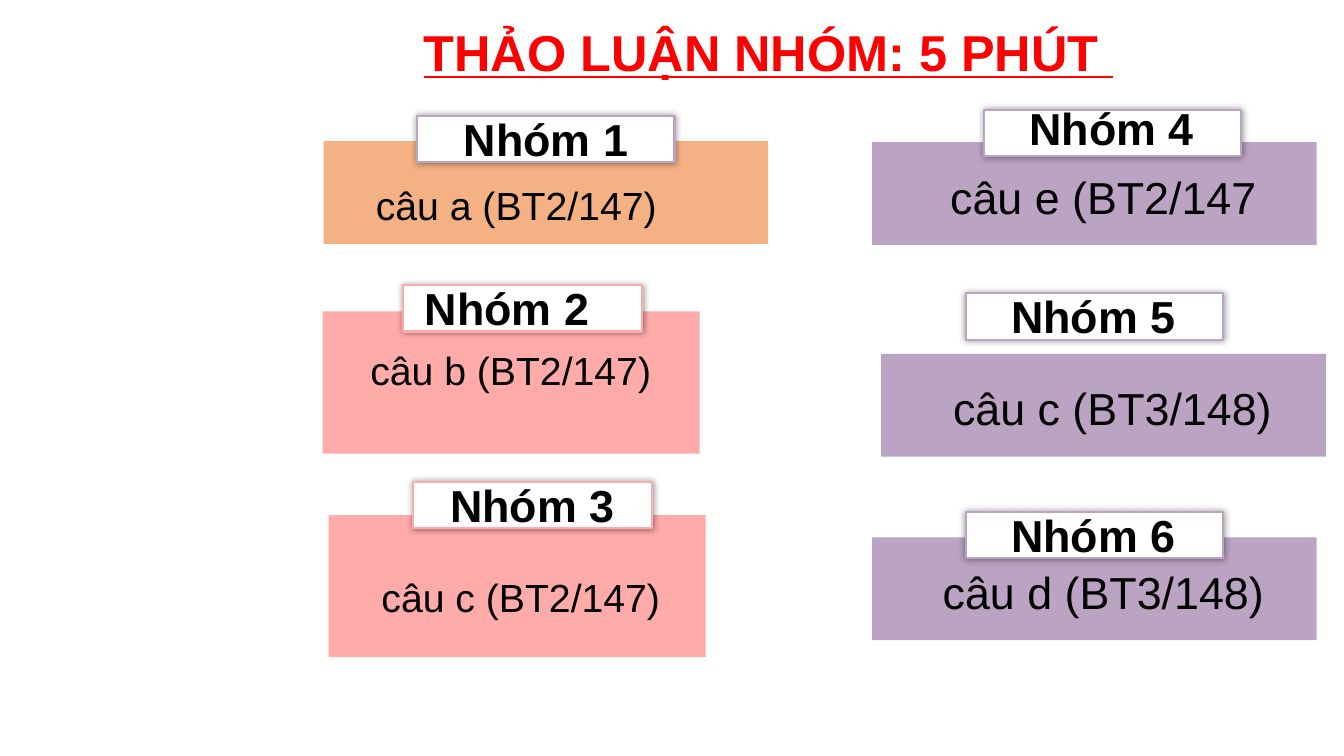
from typing import NamedTuple

from lxml import etree
from pptx import Presentation
from pptx.dml.color import RGBColor
from pptx.enum.shapes import MSO_SHAPE as Preset
from pptx.enum.text import MSO_AUTO_SIZE as AutoSize, PP_ALIGN as Align
from pptx.oxml.ns import qn
from pptx.util import Emu, Pt

PX = 9144  # EMU per px, 100 px to the inch
COLORS = {
    "title": "FF0000",
    "text": "000000",
    "paper": "FFFFFF",
    "orange": "F4B183",
    "pink": "FFABAA",
    "purple": "BBA4C3",
}
TITLE_FORMAT = {"size": Pt(36), "bold": True, "underline": True}
TAG_FORMAT = {"size": Pt(32), "bold": True}
TAG_HEIGHT = 46


class Box(NamedTuple):
    left: int
    top: int
    width: int
    height: int

    def inset(self, dx: int, dy: int, width: int, height: int) -> "Box":
        return Box(self.left + dx, self.top + dy, width, height)

    def emu(self) -> list[Emu]:
        return [Emu(value * PX) for value in self]


class Layout(NamedTuple):
    """Sizes shared by the groups of one column."""
    card: tuple[int, int]
    tag_width: int
    tag_text_width: int
    task_width: int
    task_height: int
    task_size: int


class Group(NamedTuple):
    name: str
    task: str
    layout: Layout
    fill: str
    border: str
    card_at: tuple[int, int]
    tag_at: tuple[int, int]
    task_shift: tuple[int, int] = (18, 22)
    name_shift: tuple[int, int] = (16, -9)


WIDE = Layout((441, 102), 255, 221, 423, 64, 32)
FIRST = Layout((441, 102), 255, 221, 364, 57, 28)
TALL = Layout((374, 141), 237, 206, 347, 57, 28)

GROUPS = [
    Group("Nhóm 1", "câu a (BT2/147)", FIRST, "orange", "purple",
          (321, 140), (414, 115), (9, 35), (17, -9)),
    Group("Nhóm 2", "câu b (BT2/147)", TALL, "pink", "pink",
          (320, 309), (400, 283), (13, 30), (0, -9)),
    Group("Nhóm 3", "câu c (BT2/147)", TALL, "pink", "pink",
          (326, 511), (410, 478), (17, 53), (15, -9)),
    Group("Nhóm 4", "câu e (BT2/147", WIDE, "purple", "purple",
          (865, 141), (976, 109), name_shift=(16, -14)),
    Group("Nhóm 5", "câu c (BT3/148)", WIDE, "purple", "purple",
          (874, 351), (958, 291)),
    Group("Nhóm 6", "câu d (BT3/148)", WIDE, "purple", "purple",
          (865, 533), (958, 508)),
]


def rgb(name: str) -> RGBColor:
    return RGBColor.from_string(COLORS[name])


def add_glow_shadow(shape) -> None:
    """Soft black shadow on all sides."""
    effects = shape._element.spPr.find(qn("a:effectLst"))
    shadow = etree.SubElement(effects, qn("a:outerShdw"),
                              blurRad=str(Pt(5)), dist="0", dir="0", algn="ctr")
    color = etree.SubElement(shadow, qn("a:srgbClr"), val=COLORS["text"])
    etree.SubElement(color, qn("a:alpha"), val="40000")


def add_panel(slide, box: Box, fill: str, border: str | None = None) -> None:
    panel = slide.shapes.add_shape(Preset.RECTANGLE, *box.emu())
    panel.shadow.inherit = False
    panel.fill.solid()
    panel.fill.fore_color.rgb = rgb(fill)
    if border is None:
        panel.line.fill.background()
        return
    panel.line.color.rgb = rgb(border)
    panel.line.width = Pt(1.5)
    add_glow_shadow(panel)


def add_label(slide, box: Box, words: str, formats: dict,
              color: str = "text", wrap: bool = True) -> None:
    frame = slide.shapes.add_textbox(*box.emu()).text_frame
    frame.word_wrap = wrap
    frame.auto_size = AutoSize.SHAPE_TO_FIT_TEXT
    paragraph = frame.paragraphs[0]
    paragraph.alignment = Align.CENTER
    run = paragraph.add_run()
    run.text = words
    for attribute, value in {"name": "Arial", **formats}.items():
        setattr(run.font, attribute, value)
    run.font.color.rgb = rgb(color)


def add_group(slide, group: Group) -> None:
    layout = group.layout
    # Coloured card with its task
    card = Box(*group.card_at, *layout.card)
    add_panel(slide, card, group.fill)
    add_label(slide, card.inset(*group.task_shift, layout.task_width, layout.task_height),
              group.task, {"size": Pt(layout.task_size)})
    # White tag with the group name
    tag = Box(*group.tag_at, layout.tag_width, TAG_HEIGHT)
    add_panel(slide, tag, "paper", group.border)
    add_label(slide, tag.inset(*group.name_shift, layout.tag_text_width, 64),
              group.name, TAG_FORMAT)


def main() -> None:
    deck = Presentation()
    deck.slide_width, deck.slide_height = Emu(1333 * PX), Emu(750 * PX)
    slide = deck.slides.add_slide(deck.slide_layouts[6])

    # Heading
    add_label(slide, Box(407, 16, 710, 71), "THẢO LUẬN NHÓM: 5 PHÚT ",
              TITLE_FORMAT, "title", wrap=False)

    # Six discussion groups
    for group in GROUPS:
        add_group(slide, group)

    deck.save("out.pptx")


if __name__ == "__main__":
    main()
